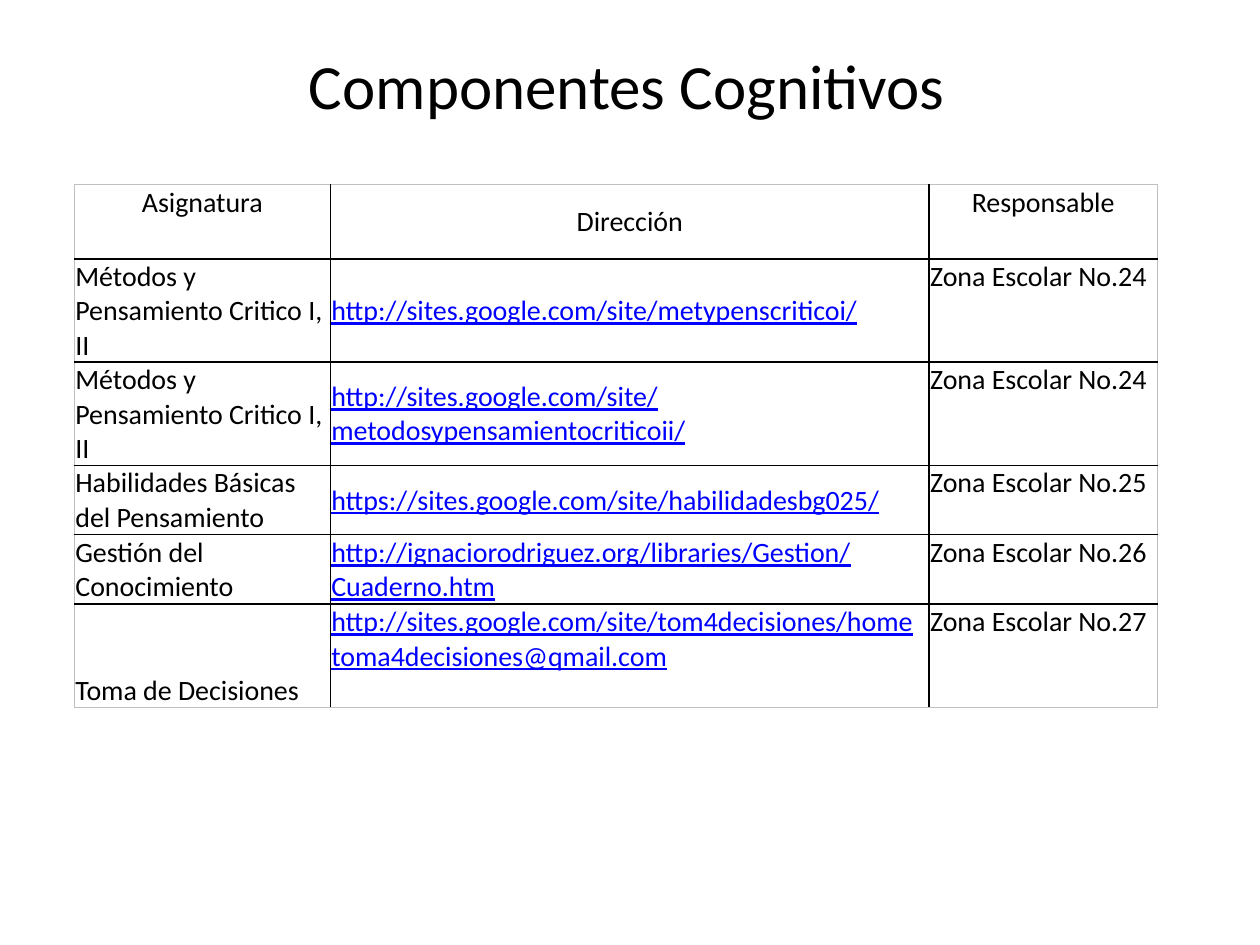
"""Build the slide listing the cognitive component subjects and their sites."""
from lxml.etree import SubElement
from pptx import Presentation
from pptx.dml.color import RGBColor
from pptx.enum.text import MSO_ANCHOR, PP_ALIGN
from pptx.oxml.ns import qn
from pptx.util import Cm, Pt

BLACK = RGBColor(0, 0, 0)
GRAY = RGBColor(0xC0, 0xC0, 0xC0)
BLUE = RGBColor(0, 0, 0xFF)
TOP, MIDDLE, BOTTOM = MSO_ANCHOR.TOP, MSO_ANCHOR.MIDDLE, MSO_ANCHOR.BOTTOM

HEADERS = ("Asignatura", "Dirección", "Responsable")
SUBJECTS = [
    ("Métodos y Pensamiento Critico I, II",
     "http://sites.google.com/site/metypenscriticoi/", "Zona Escolar No.24"),
    ("Métodos y Pensamiento Critico I, II",
     "http://sites.google.com/site/metodosypensamientocriticoii/", "Zona Escolar No.24"),
    ("Habilidades Básicas del Pensamiento",
     "https://sites.google.com/site/habilidadesbg025/", "Zona Escolar No.25"),
    ("Gestión del Conocimiento",
     "http://ignaciorodriguez.org/libraries/Gestion/Cuaderno.htm", "Zona Escolar No.26"),
    ("Toma de Decisiones",
     "http://sites.google.com/site/tom4decisiones/home toma4decisiones@qmail.com",
     "Zona Escolar No.27"),
]
COLUMN_WIDTHS = (5.16, 12.07, 4.6)
ROW_HEIGHTS = (1.5, 2.08, 2.08, 1.4, 1.4, 2.09)


def add_span(para, text, size, color=BLACK):
    span = para.add_run()
    span.text = text
    span.font.name = "Calibri"
    span.font.size = Pt(size)
    span.font.color.rgb = color
    return span


def add_border(cell, side, outer):
    line = SubElement(cell._tc.get_or_add_tcPr(), qn(f"a:{side}"),
                      w=str(Pt(0.5 if outer else 1)))
    fill = SubElement(line, qn("a:solidFill"))
    SubElement(fill, qn("a:srgbClr"), val=str(GRAY if outer else BLACK))


deck = Presentation()
deck.slide_width, deck.slide_height = Cm(25.4), Cm(19.05)
page = deck.slides.add_slide(deck.slide_layouts[6])

title = page.shapes.add_textbox(Cm(4.74), Cm(0.82), Cm(15.8), Cm(2.16))
title.text_frame.word_wrap = True
para = title.text_frame.paragraphs[0]
para.alignment = PP_ALIGN.CENTER
add_span(para, "Componentes Cognitivos", 36)

rows = [HEADERS] + SUBJECTS
last_row, last_column = len(rows) - 1, len(HEADERS) - 1
table = page.shapes.add_table(
    len(rows), len(HEADERS), Cm(1.5), Cm(3.72),
    Cm(sum(COLUMN_WIDTHS)), Cm(sum(ROW_HEIGHTS))).table
for column, width in zip(table.columns, COLUMN_WIDTHS):
    column.width = Cm(width)
for row, height in zip(table.rows, ROW_HEIGHTS):
    row.height = Cm(height)

for r, texts in enumerate(rows):
    for c, text in enumerate(texts):
        cell = table.cell(r, c)
        cell.margin_left = cell.margin_right = cell.margin_top = Cm(0.02)
        cell.margin_bottom = Cm(0)
        cell.vertical_anchor = MIDDLE if c == 1 and r < last_row else TOP
        if c == 0 and r == last_row:
            cell.vertical_anchor = BOTTOM
        add_border(cell, "lnL", c == 0)
        add_border(cell, "lnR", c == last_column)
        add_border(cell, "lnT", r == 0)
        add_border(cell, "lnB", r == last_row)
        cell.fill.background()
        para = cell.text_frame.paragraphs[0]
        para.alignment = PP_ALIGN.CENTER if r == 0 else PP_ALIGN.LEFT
        is_address = c == 1 and r > 0
        span = add_span(para, text, 16, BLUE if is_address else BLACK)
        span.font.bold = False
        span.font.underline = is_address

deck.save("out.pptx")
